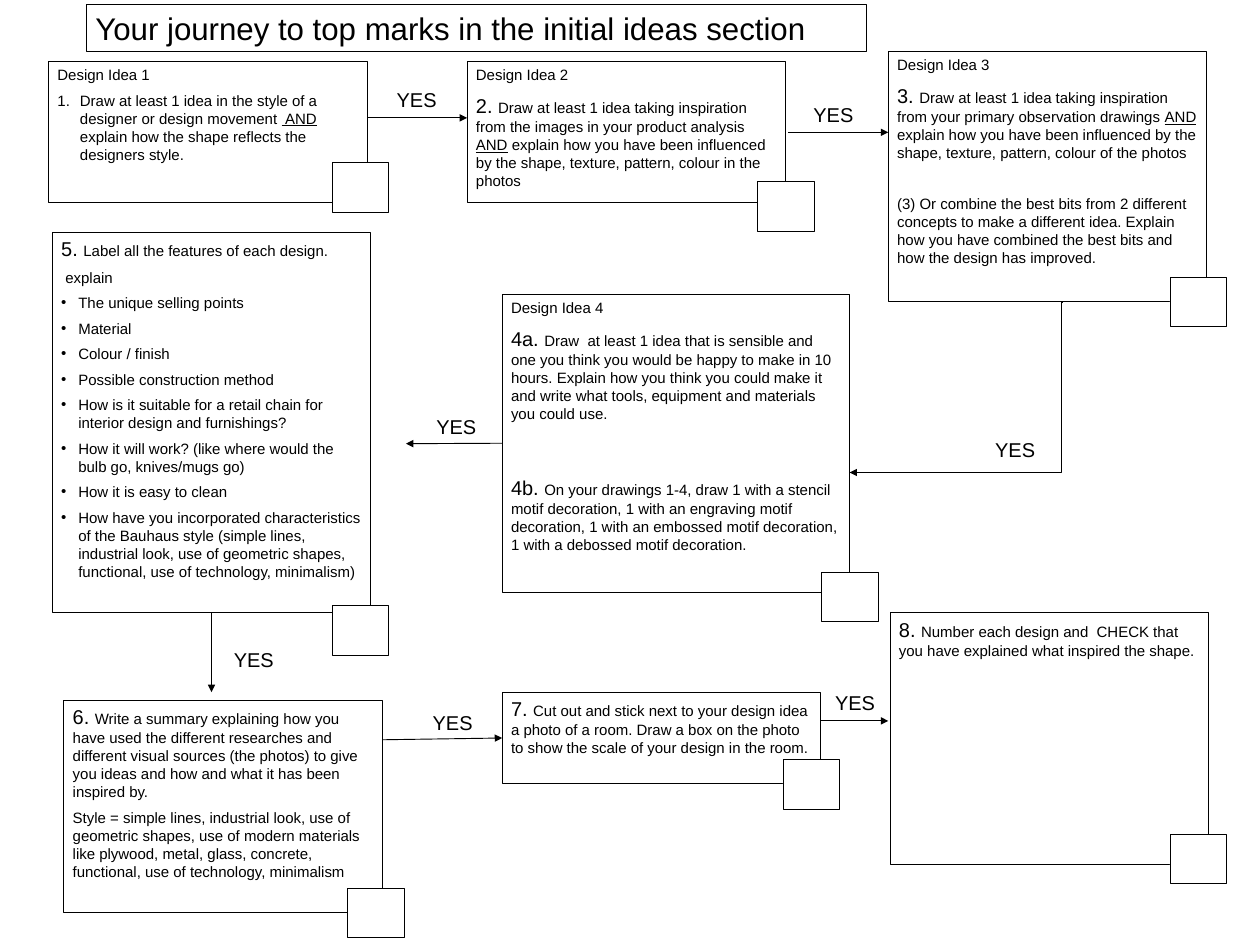
from lxml import etree
from pptx import Presentation
from pptx.dml.color import RGBColor
from pptx.enum.shapes import MSO_CONNECTOR, MSO_SHAPE
from pptx.enum.text import MSO_ANCHOR, MSO_AUTO_SIZE, PP_ALIGN
from pptx.oxml.ns import qn
from pptx.util import Inches, Pt

RECT = MSO_SHAPE.RECTANGLE
STRAIGHT, ELBOW = MSO_CONNECTOR.STRAIGHT, MSO_CONNECTOR.ELBOW
TOP, MIDDLE = MSO_ANCHOR.TOP, MSO_ANCHOR.MIDDLE
BLACK = RGBColor(0x00, 0x00, 0x00)
WHITE = RGBColor(0xFF, 0xFF, 0xFF)
FONT = "Arial"
TITLE_SIZE, LEAD_SIZE, TEXT_SIZE = 25, 16, 12
LINE_WIDTH = Pt(0.75)
CHECK_W, CHECK_H = 0.63, 0.55
LABEL_W, LABEL_H = 1.03, 0.37

# Content
TITLE = "Your journey to top marks in the initial ideas section"
TITLE_BOX = (0.96, 0.05, 8.67, 0.52)

# Indent in inches and bullet element for each kind of paragraph
LISTS = {
    "plain": (0, "a:buNone", {}),
    "bullet": (0.19, "a:buChar", {"char": "•"}),
    "number": (0.25, "a:buAutoNum", {"type": "arabicPeriod"}),
}

# Card: box, checkbox corner, paragraphs (kind, large lead, text, space before
# in points if special); words between underscores are underlined
CARDS = {
    "1": ((0.54, 0.68, 3.54, 1.57), (3.69, 1.81), [
        ("plain", "", "Design Idea 1"),
        ("number", "", "Draw at least 1 idea in the style of a designer or design "
         "movement _ AND _explain how the shape reflects the designers style."),
    ]),
    "2": ((5.19, 0.68, 3.54, 1.57), (8.42, 2.02), [
        ("plain", "", "Design Idea 2"),
        ("plain", "2. ", "Draw at least 1 idea taking inspiration from the images in "
         "your product analysis _AND_ explain how you have been influenced by the "
         "shape, texture, pattern, colour in the photos"),
    ]),
    "3": ((9.87, 0.57, 3.54, 2.78), (13, 3.08), [
        ("plain", "", "Design Idea 3"),
        ("plain", "3. ", "Draw at least 1 idea taking inspiration from your primary "
         "observation drawings _AND_ explain how you have been influenced by the "
         "shape, texture, pattern, colour of the photos"),
        ("plain", "", "(3) Or combine the best bits from 2 different concepts to make "
         "a different idea. Explain how you have combined the best bits and how the "
         "design has improved.", 26),
    ]),
    "4": ((5.58, 3.27, 3.86, 3.31), (9.13, 6.36), [
        ("plain", "", "Design Idea 4"),
        ("plain", "4a. ", "Draw  at least 1 idea that is sensible and one you think "
         "you would be happy to make in 10 hours. Explain how you think you could make "
         "it and write what tools, equipment and materials you could use."),
        ("plain", "4b. ", "On your drawings 1-4, draw 1 with a stencil motif "
         "decoration, 1 with an engraving motif decoration, 1 with an embossed motif "
         "decoration, 1 with a debossed motif decoration.", 42),
    ]),
    "5": ((0.58, 2.58, 3.54, 4.22), (3.69, 6.73), [
        ("plain", "5. ", "Label all the features of each design."),
        ("plain", "", " explain"),
        ("bullet", "", "The unique selling points"),
        ("bullet", "", "Material"),
        ("bullet", "", "Colour / finish"),
        ("bullet", "", "Possible construction method"),
        ("bullet", "", "How is it suitable for a retail chain for interior design and "
         "furnishings?"),
        ("bullet", "", "How it will work? (like where would the bulb go, knives/mugs go)"),
        ("bullet", "", "How it is easy to clean"),
        ("bullet", "", "How have you incorporated characteristics of the Bauhaus style "
         "(simple lines, industrial look, use of geometric shapes, functional, use of "
         "technology, minimalism)"),
    ]),
    "6": ((0.71, 7.78, 3.54, 2.36), (3.86, 9.87), [
        ("plain", "6. ", "Write a summary explaining how you have used the different "
         "researches and different visual sources (the photos) to give you ideas and "
         "how and what it has been inspired by."),
        ("plain", "", "Style = simple lines, industrial look, use of geometric shapes, "
         "use of modern materials like plywood, metal, glass, concrete, functional, "
         "use of technology, minimalism"),
    ]),
    "7": ((5.58, 7.69, 3.54, 1.02), (8.7, 8.44), [
        ("plain", "7. ", "Cut out and stick next to your design idea a photo of a room. "
         "Draw a box on the photo to show the scale of your design in the room."),
    ]),
    "8": ((9.89, 6.81, 3.54, 2.8), (13, 9.27), [
        ("plain", "8. ", "Number each design and  CHECK that you have explained what "
         "inspired the shape."),
    ]),
}
LIST_CARD = "5"

# Arrow: type, start, end, label corner, joined start and end (card, side)
ARROWS = [
    (STRAIGHT, (4.09, 1.31), (5.19, 1.31), (4.31, 0.92), None, None),
    (STRAIGHT, (8.76, 1.47), (9.87, 1.47), (8.94, 1.09), None, None),
    (ELBOW, (11.8, 3.36), (9.44, 5.25), (10.96, 4.81), None, None),
    (STRAIGHT, (5.58, 4.93), (4.51, 4.93), (4.75, 4.56), ("4", 1), None),
    (STRAIGHT, (2.35, 6.81), (2.35, 7.69), (2.5, 7.15), ("5", 2), None),
    (STRAIGHT, (4.25, 8.22), (5.58, 8.2), (4.71, 7.85), None, ("7", 1)),
    (STRAIGHT, (9.12, 8.01), (9.87, 8.01), (9.18, 7.62), None, None),
]
LABEL = "YES"


def inches(values):
    return [Inches(v) for v in values]


def outline(sp, fill=None):
    if fill is None:
        sp.fill.background()
    else:
        sp.fill.solid()
        sp.fill.fore_color.rgb = fill
    sp.line.color.rgb = BLACK
    sp.line.width = LINE_WIDTH


def place(sp, box):
    sp.left, sp.top, sp.width, sp.height = inches(box)


def add_rect(box, fill=None):
    sp = slide.shapes.add_shape(RECT, *inches(box))
    sp.shadow.inherit = False
    outline(sp, fill)
    return sp


def format_run(r, size, underline=None):
    r.font.name, r.font.size, r.font.underline = FONT, Pt(size), underline
    r.font.color.rgb = BLACK


def set_frame(tf, anchor):
    tf.word_wrap, tf.auto_size, tf.vertical_anchor = True, MSO_AUTO_SIZE.NONE, anchor


def write_line(sp, text, size, anchor):
    tf = sp.text_frame
    tf.text = text
    set_frame(tf, anchor)
    tf.paragraphs[0].alignment = PP_ALIGN.LEFT
    format_run(tf.paragraphs[0].runs[0], size)


def write_card(tf, paragraphs):
    set_frame(tf, TOP)
    for i, (kind, lead, text, *before) in enumerate(paragraphs):
        p = tf.add_paragraph() if i else tf.paragraphs[0]
        p.alignment = PP_ALIGN.LEFT
        half_line = (LEAD_SIZE if lead else TEXT_SIZE) / 2
        p.space_before = Pt(before[0] if before else half_line if i else 0)
        indent, bullet, attributes = LISTS[kind]
        pPr = p._p.get_or_add_pPr()
        pPr.set("marL", str(Inches(indent)))
        pPr.set("indent", str(-Inches(indent)))
        etree.SubElement(pPr, qn(bullet), attributes)
        if lead:
            r = p.add_run()
            r.text = lead
            format_run(r, LEAD_SIZE)
        for n, part in enumerate(text.split("_")):
            r = p.add_run()
            r.text = part
            format_run(r, TEXT_SIZE, True if n % 2 else None)


def add_arrow(kind, start, end):
    line = slide.shapes.add_connector(kind, *inches(start + end))
    line.line.color.rgb = BLACK
    line.line.width = LINE_WIDTH
    spPr = line._element.spPr
    etree.SubElement(spPr.find(qn("a:ln")), qn("a:tailEnd"), type="triangle")
    etree.SubElement(spPr, qn("a:effectLst"))
    if kind == ELBOW:  # turn right at the start
        guides = spPr.find(qn("a:prstGeom")).get_or_add_avLst()
        etree.SubElement(guides, qn("a:gd"), name="adj1", fmla="val 200")
    return line


prs = Presentation()
prs.slide_width, prs.slide_height = Inches(14), Inches(10.5)
slide = prs.slides.add_slide(prs.slide_layouts[1])

# Title
title = slide.shapes.title
place(title, TITLE_BOX)
outline(title, WHITE)
write_line(title, TITLE, TITLE_SIZE, MIDDLE)

# Cards
cards = {}
for name, (box, _, paragraphs) in CARDS.items():
    if name == LIST_CARD:
        sp = slide.placeholders[1]
        place(sp, box)
        outline(sp)
    else:
        sp = add_rect(box)
    write_card(sp.text_frame, paragraphs)
    cards[name] = sp

# Checkboxes
for _, corner, _ in CARDS.values():
    add_rect((*corner, CHECK_W, CHECK_H), WHITE)

# Arrows and their labels
for kind, start, end, corner, begin_join, end_join in ARROWS:
    line = add_arrow(kind, start, end)
    if begin_join:
        line.begin_connect(cards[begin_join[0]], begin_join[1])
    if end_join:
        line.end_connect(cards[end_join[0]], end_join[1])
    label = slide.shapes.add_textbox(*inches((*corner, LABEL_W, LABEL_H)))
    write_line(label, LABEL, LEAD_SIZE, TOP)

prs.save("out.pptx")
